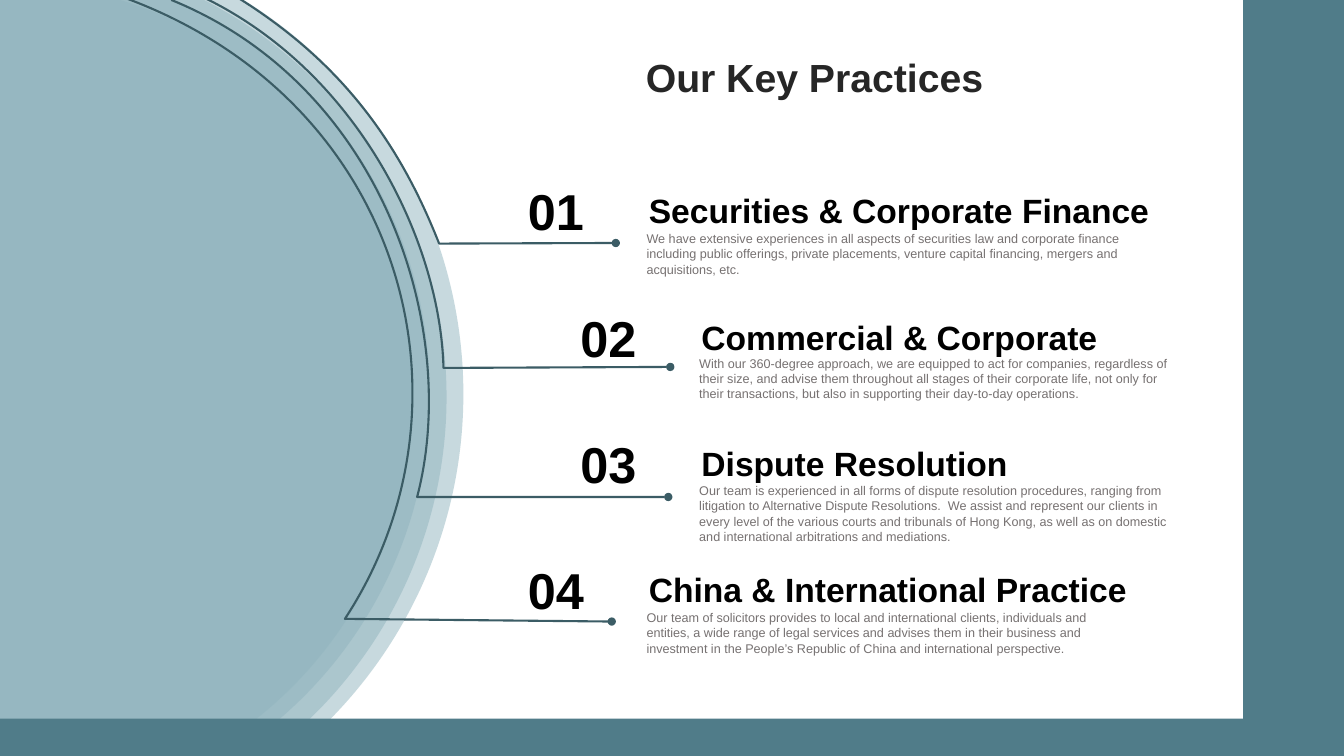
import math

from lxml import etree
from pptx import Presentation
from pptx import util as u
from pptx.dml.color import RGBColor
from pptx.enum import shapes, text
from pptx.oxml.ns import qn

WIDTH, HEIGHT = 960, 540
FONT = "Arial"
TEAL = RGBColor(0x50, 0x7C, 0x89)
MIST = RGBColor(0x90, 0xB4, 0xBE)
DEEP = RGBColor(0x3B, 0x5C, 0x65)
BLACK = RGBColor(0x00, 0x00, 0x00)
CHARCOAL = RGBColor(0x26, 0x26, 0x26)
GREY = RGBColor(0x76, 0x71, 0x71)

# Number, left, top, heading width, body offset, body height, heading, body
PRACTICES = [
    ("01", 454.8, 131.8, 474, 29.5, 40, "Securities & Corporate Finance",
     "We have extensive experiences in all aspects of securities law and "
     "corporate finance including public offerings, private placements, "
     "venture capital financing, mergers and acquisitions, etc."),
    ("02", 492.4, 222.5, 355, 28, 40, "Commercial & Corporate",
     "With our 360-degree approach, we are equipped to act for companies, "
     "regardless of their size, and advise them throughout all stages of "
     "their corporate life, not only for their transactions, but also in "
     "supporting their day-to-day operations."),
    ("03", 492.4, 312.6, 355, 28.6, 51, "Dispute Resolution",
     "Our team is experienced in all forms of dispute resolution procedures, "
     "ranging from litigation to Alternative Dispute Resolutions.  We assist "
     "and represent our clients in every level of the various courts and "
     "tribunals of Hong Kong, as well as on domestic and international "
     "arbitrations and mediations."),
    ("04", 454.8, 402.5, 430, 29.5, 40, "China & International Practice",
     "Our team of solicitors provides to local and international clients, "
     "individuals and entities, a wide range of legal services and advises "
     "them in their business and investment in the People’s Republic of "
     "China and international perspective."),
]

# Four control points of each curve, then the end of its pointer
LEADERS = [
    [(171.4, -0.7), (244.8, 45.4), (285.8, 103), (313.7, 174), (439.9, 173.6)],
    [(144.7, -2.2), (257, 51.8), (314.6, 174.2), (316.8, 262.8), (478.8, 262.1)],
    [(122.4, 0), (275, 61.9), (329, 236.9), (298, 355), (477.4, 355)],
    [(91.4, -0.7), (290.9, 74.2), (345.6, 290.9), (246.4, 442.1), (437, 444)],
]
DISC_CENTRES = [281.5, 283.7, 280.4, 282.2]
DISC_RADIUS, DISC_STEP, DISC_ARCS = 331, 12, 3


def add_outline(page, bounds, steps):
    """Freeform in bounds (left, top, right, bottom); a step is a tag and its points."""
    left, top, right, bottom = map(u.Pt, bounds)
    builder = page.shapes.build_freeform(left, top)
    builder.add_line_segments([(right, bottom)], close=False)
    outline = builder.convert_to_shape()
    outline.shadow.inherit = False
    route = outline._element.find(".//" + qn("a:path"))
    for child in list(route):
        route.remove(child)
    for tag, *points in steps:
        step = etree.SubElement(route, qn(tag))
        for x, y in points:
            etree.SubElement(step, qn("a:pt"), x=str(u.Pt(x) - left), y=str(u.Pt(y) - top))
    return outline


def add_text(parent, area, words, size, color, bold=True,
             align=text.PP_ALIGN.LEFT, side=7.2):
    box = parent.shapes.add_textbox(*map(u.Pt, area))
    frame_format = {
        "word_wrap": True,
        "auto_size": text.MSO_AUTO_SIZE.SHAPE_TO_FIT_TEXT,
        "vertical_anchor": text.MSO_ANCHOR.MIDDLE,
        "margin_left": u.Pt(side), "margin_right": u.Pt(side),
        "margin_top": u.Pt(3.6), "margin_bottom": u.Pt(3.6),
    }
    for name, value in frame_format.items():
        setattr(box.text_frame, name, value)
    para = box.text_frame.paragraphs[0]
    para.alignment = align
    span = para.add_run()
    span.text = words
    for name, value in {"name": FONT, "size": u.Pt(size), "bold": bold}.items():
        setattr(span.font, name, value)
    span.font.color.rgb = color


def add_bar(page, area):
    bar = page.shapes.add_shape(shapes.MSO_SHAPE.RECTANGLE, *map(u.Pt, area))
    bar.shadow.inherit = False
    bar.fill.solid()
    bar.fill.fore_color.rgb = TEAL
    bar.line.fill.background()


def add_discs(page, left, top, bottom):
    """Half-transparent discs centred on the left edge, cut at top and bottom."""
    for index, centre in enumerate(DISC_CENTRES):
        radius = DISC_RADIUS - DISC_STEP * index
        start = math.asin((top - centre) / radius)
        turn = (math.asin((bottom - centre) / radius) - start) / DISC_ARCS
        pull = 4 / 3 * math.tan(turn / 4)

        def rim(angle, lean=0):
            cosine, sine = math.cos(angle), math.sin(angle)
            return (left + radius * (cosine - lean * sine),
                    centre + radius * (sine + lean * cosine))

        arcs = [("a:cubicBezTo", rim(angle, pull), rim(angle + turn, -pull),
                 rim(angle + turn))
                for angle in (start + turn * arc for arc in range(DISC_ARCS))]
        disc = add_outline(page, (left, top, left + radius, bottom), [
            ("a:moveTo", (left, top)), ("a:lnTo", rim(start)), *arcs,
            ("a:lnTo", (left, bottom)), ("a:close",)])
        disc.line.fill.background()
        disc.fill.solid()
        disc.fill.fore_color.rgb = MIST
        tint = disc.fill._xPr.find(".//" + qn("a:srgbClr"))
        etree.SubElement(tint, qn("a:alpha"), val="50000")


def add_leader(page, start, pull_out, pull_in, bend, tip):
    """A curve that follows a disc and then points at a practice."""
    bounds = (start[0], start[1], tip[0], max(bend[1], tip[1]))
    leader = add_outline(page, bounds, [
        ("a:moveTo", start), ("a:cubicBezTo", pull_out, pull_in, bend),
        ("a:lnTo", tip)])
    leader.fill.background()
    leader.line.color.rgb = DEEP
    leader.line.width = u.Pt(1.5)
    etree.SubElement(leader.line._get_or_add_ln(), qn("a:tailEnd"), type="oval")


def add_practice(page, number, left, top, width, body_offset, body_height,
                 heading, body):
    group = page.shapes.add_group_shape()
    add_text(group, (left, top + body_offset, 355, body_height), body, 9, GREY,
             bold=False)
    add_text(group, (left, top, width, 36), heading, 24, BLACK, side=8.64)
    add_text(group, (left - 95.6, top - 7.2, 75.6, 51), number, 36, BLACK,
             align=text.PP_ALIGN.CENTER, side=8.64)


def build_practices_page(page):
    # Discs, side bar and title
    add_discs(page, 0, -1.5, HEIGHT)
    add_bar(page, (888, 0, 72, HEIGHT))
    add_text(page, (357, 34.5, 449.5, 41), "Our Key Practices", 28, CHARCOAL,
             align=text.PP_ALIGN.CENTER)
    # Practices and their leaders
    for practice in PRACTICES:
        add_practice(page, *practice)
    for leader in LEADERS:
        add_leader(page, *leader)
    # Bottom bar
    add_bar(page, (0, 513.4, WIDTH, 26.6))


def main():
    deck = Presentation()
    deck.slide_width, deck.slide_height = u.Pt(WIDTH), u.Pt(HEIGHT)
    build_practices_page(deck.slides.add_slide(deck.slide_layouts[6]))
    deck.save("out.pptx")


if __name__ == "__main__":
    main()
